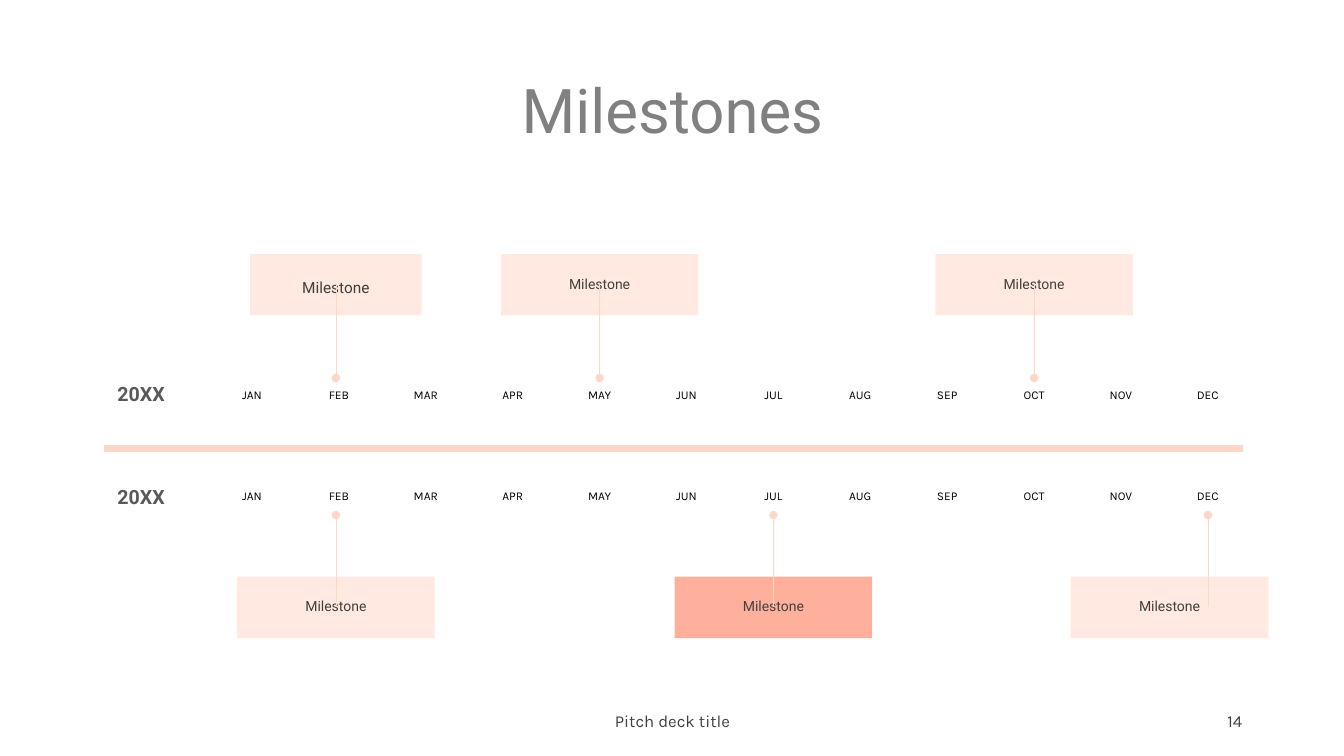
from lxml.etree import SubElement
from pptx import Presentation
from pptx.dml.color import RGBColor
from pptx.enum.shapes import MSO_CONNECTOR as CONN, MSO_SHAPE as SHAPE
from pptx.enum.text import MSO_ANCHOR as ANCHOR, MSO_AUTO_SIZE as AUTO, PP_ALIGN as ALIGN
from pptx.oxml.ns import qn
from pptx.util import Inches, Pt

W, H = 13.33, 7.5
PEACH, PALE, CORAL, DARK = "FFD7C7", "FFE9E0", "FFB09D", "404040"
MONTHS = "JAN FEB MAR APR MAY JUN JUL AUG SEP OCT NOV DEC".split()
LABEL_W, LABEL_H = 0.8, 0.5
MONTH_W, MONTH_H = 0.7, 0.22
CARD_W, CARD_H = 1.96, 0.61
FIRST_MONTH, LAST_MARGIN = 1.5, 0.35
DOT_GAP = 0.42


def rgb(color):
    return RGBColor.from_string(color)


def inches(*lengths):
    return [Inches(n) for n in lengths]


def write(shape, text, size, font, color, align=ALIGN.CENTER, anchor=ANCHOR.MIDDLE,
          bold=False, spacing=None, before=None, insets=(0.1, 0.05, 0.1, 0.05)):
    tf = shape.text_frame
    tf.text = text
    tf.word_wrap = True
    tf.auto_size = AUTO.NONE
    tf.vertical_anchor = anchor
    tf.margin_left, tf.margin_top, tf.margin_right, tf.margin_bottom = inches(*insets)
    p = tf.paragraphs[0]
    p.alignment = align
    if spacing is not None:
        p.line_spacing = spacing
    if before is not None:
        p.space_before = Pt(before)
    f = p.runs[0].font
    f.size, f.name, f.bold = Pt(size), font, bold
    f.color.rgb = rgb(color)


def add_text(s, box, text, size, font, color, **style):
    write(s.shapes.add_textbox(*inches(*box)), text, size, font, color, **style)


def add_line(s, start, end, width, dot=False):
    line = s.shapes.add_connector(CONN.STRAIGHT, *inches(*start, *end))
    line.line.color.rgb = rgb(PEACH)
    line.line.width = Pt(width)
    if dot:
        SubElement(line.line._get_or_add_ln(), qn("a:tailEnd"), type="oval")
    SubElement(line._element.spPr, qn("a:effectLst"))


def add_card(s, box, fill, size=10, **style):
    sp = s.shapes.add_shape(SHAPE.RECTANGLE, *inches(*box))
    sp.shadow.inherit = False
    sp.fill.solid()
    sp.fill.fore_color.rgb = rgb(fill)
    sp.line.fill.background()
    write(sp, "Milestone", size, "Roboto", DARK, **style)


def add_title(s, box):
    title = s.shapes.title
    title.left, title.top, title.width, title.height = inches(*box)
    write(title, "Milestones", 44, "Roboto", "808080", spacing=0.9)


def add_year(s, box, milestones, month_gap, above):
    x, y, w, h = box
    pitch = (w - FIRST_MONTH - LAST_MARGIN) / (len(MONTHS) - 1)

    def from_axis(gap, height=0):
        return y + h - gap - height if above else y + gap

    add_text(s, (x, from_axis(0, LABEL_H), LABEL_W, LABEL_H), "20XX", 14, "Roboto",
             "595959", bold=True, spacing=0.9, before=10)
    for i, month in enumerate(MONTHS):
        left = x + FIRST_MONTH + i * pitch - MONTH_W / 2
        add_text(s, (left, from_axis(month_gap, MONTH_H), MONTH_W, MONTH_H), month, 8.5,
                 "Karla", "000000", anchor=ANCHOR.TOP, spacing=0.7, before=10)

    card_gap = h - CARD_H
    for month, nudge, shift, card_w, fill, style in milestones:
        stem_x = x + FIRST_MONTH + MONTHS.index(month) * pitch + nudge
        card = (stem_x - card_w / 2 + shift, from_axis(card_gap, CARD_H), card_w, CARD_H)
        add_card(s, card, fill, **style)
        add_line(s, (stem_x, from_axis(card_gap + CARD_H / 2)),
                 (stem_x, from_axis(DOT_GAP)), 0.5, dot=True)


def add_footer(s, box):
    x, y, w, h = box
    add_text(s, (x + w / 2 - 2.25, y, 4.5, h), "Pitch deck title", 12, "Karla", DARK)
    add_text(s, (x + w - 3, y, 3, h), "14", 12, "Karla", DARK, align=ALIGN.RIGHT)


def main():
    prs = Presentation()
    prs.slide_width, prs.slide_height = inches(W, H)
    s = prs.slides.add_slide(prs.slide_layouts[5])

    plain = dict(spacing=0.9, before=10, insets=(0, 0, 0, 0))
    roomy = dict(size=11, spacing=1.5, before=36, insets=(0.1, 0, 0.1, 0.05))
    first_year = [
        ("FEB", -0.03, 0, 1.7, PALE, roomy),
        ("MAY", 0, 0, CARD_W, PALE, plain),
        ("OCT", 0, 0, CARD_W, PALE, plain),
    ]
    second_year = [
        ("FEB", -0.03, 0, CARD_W, PALE, plain),
        ("JUL", 0, 0, CARD_W, CORAL, plain),
        ("DEC", 0, -0.38, CARD_W, PALE, plain),
    ]

    add_line(s, (1.03, 4.45), (12.33, 4.45), 5)
    add_title(s, (0.92, 0.4, 11.5, 1.45))
    add_year(s, (1, 2.52, 11.33, 1.65), first_year, 0.12, above=True)
    add_year(s, (1, 4.69, 11.33, 1.64), second_year, 0.15, above=False)
    add_footer(s, (0.92, 6.95, 11.5, 0.4))
    prs.save("out.pptx")


if __name__ == "__main__":
    main()
